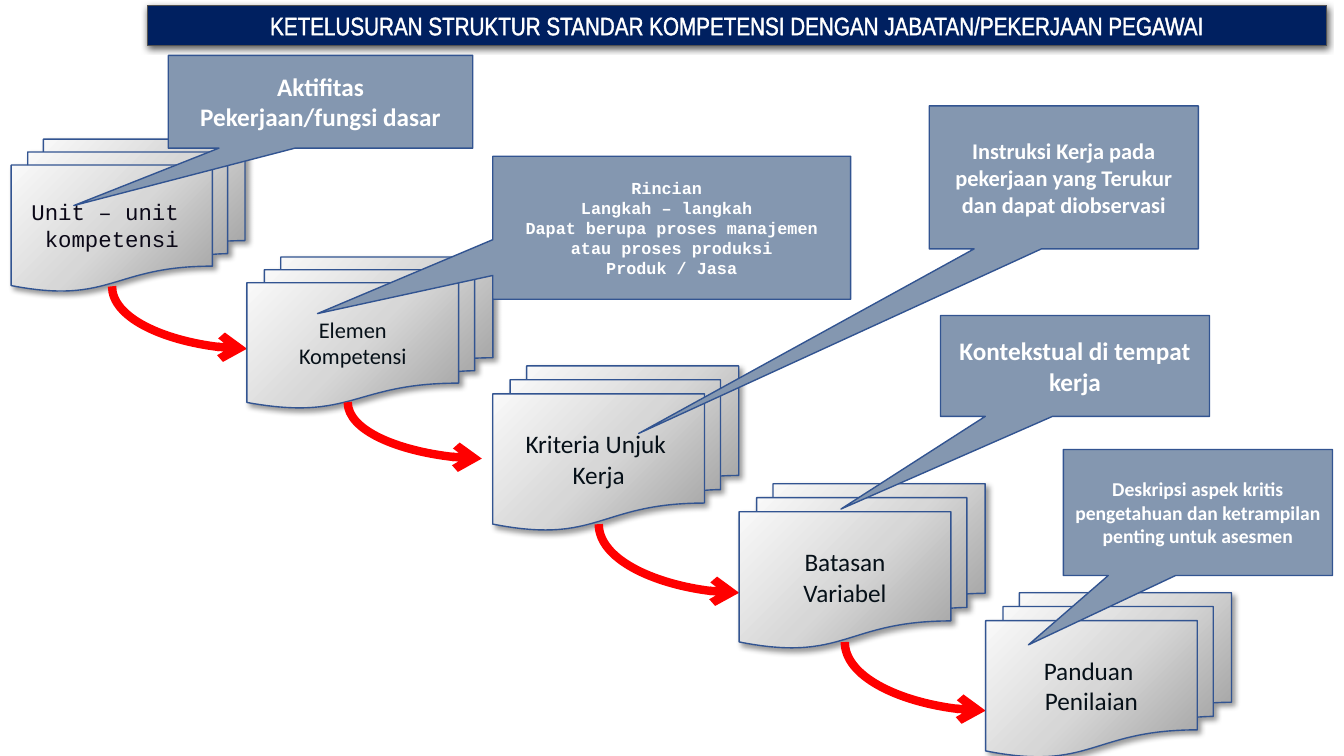
"""Build a slide tracing competency standards to the jobs of employees."""
from pptx import Presentation
from pptx.dml.color import RGBColor
from pptx.enum.shapes import MSO_CONNECTOR as Link, MSO_SHAPE as Kind
from pptx.enum.text import MSO_ANCHOR as Anchor, MSO_AUTO_SIZE as Fit, PP_ALIGN as Align
from pptx.oxml import parse_xml
from pptx.util import Pt

WHITE = RGBColor(0xFF, 0xFF, 0xFF)
NAVY = RGBColor(0x00, 0x20, 0x60)
GRAY = RGBColor(0x52, 0x52, 0x52)
BLUE = RGBColor(0x32, 0x54, 0x91)
SLATE = RGBColor(0x84, 0x97, 0xB0)
RED = RGBColor(0xFF, 0x00, 0x00)
INK = RGBColor(0x06, 0x10, 0x18)
DARK = RGBColor(0x0B, 0x08, 0x17)
NS = 'xmlns:a="http://schemas.openxmlformats.org/drawingml/2006/main"'
SHEEN = f'''<a:gradFill {NS} rotWithShape="1"><a:gsLst>
<a:gs pos="0"><a:srgbClr val="979797"/></a:gs>
<a:gs pos="50000"><a:srgbClr val="D7D7D7"/></a:gs>
<a:gs pos="100000"><a:srgbClr val="FFFFFF"/></a:gs></a:gsLst>
<a:path path="circle"><a:fillToRect l="100000" t="100000"/></a:path></a:gradFill>'''

deck = Presentation()
deck.slide_width, deck.slide_height = Pt(960), Pt(540)
slide = deck.slides.add_slide(deck.slide_layouts[6])
shapes = slide.shapes


def add_box(kind, box, lines, size, face, color, bold=False, edge=BLUE, weight=1):
    shape = shapes.add_shape(kind, *map(Pt, box))
    shape.shadow.inherit = False
    shape.line.color.rgb = edge
    shape.line.width = Pt(weight)
    frame = shape.text_frame
    frame.text = "\n".join(lines)
    frame.word_wrap = True
    frame.vertical_anchor = Anchor.MIDDLE
    for para in frame.paragraphs:
        para.alignment = Align.CENTER
        font = para.font
        font.name, font.size, font.bold = face, Pt(size), bold
        font.color.rgb = color
    return shape


def add_shade(shape, alpha, blur, dist, angle):
    glow = shape._element.spPr.find("{*}effectLst")
    glow.append(parse_xml(
        f'<a:outerShdw {NS} blurRad="{Pt(blur)}" dist="{Pt(dist)}" dir="{angle * 60000}" '
        f'algn="t" rotWithShape="0"><a:srgbClr val="000000">'
        f'<a:alpha val="{alpha * 1000}"/></a:srgbClr></a:outerShdw>'))


stages = [
    ((8, 99.4, 167, 108.7), ["Unit – unit ", "kompetensi"], 16, "Courier New", DARK,
     (80, 204.5, 176.4, 249.1)),
    ((176.4, 183.6, 175.7, 108), ["Elemen", "Kompetensi"], 16, "Calibri", INK,
     (248.4, 287.3, 344.2, 327.6)),
    ((352, 261.4, 175.7, 117.4), ["Kriteria Unjuk ", "Kerja"], 18, "Calibri", INK,
     (427.7, 374.4, 528, 423.4)),
    ((528, 345.6, 175.7, 117.4), ["Batasan", "Variabel"], 18, "Calibri", INK,
     (603.4, 458.6, 704, 507.6)),
    ((704, 423.4, 175.7, 117.4), ["Panduan ", "Penilaian"], 18, "Calibri", INK, None),
]
for box, lines, size, face, color, path in stages:
    stack = add_box(Kind.FLOWCHART_MULTIDOCUMENT, box, lines, size, face, color)
    stack._element.spPr.insert(2, parse_xml(SHEEN))
    add_shade(stack, 40, 4, 3, 45)
    if path:
        x1, y1, x2, y2 = path
        wide, high = y2 - y1, x2 - x1
        left, top = (x1 + x2 - wide) / 2, (y1 + y2 - high) / 2
        arrow = shapes.add_connector(
            Link.CURVE, Pt(left), Pt(top), Pt(left + wide), Pt(top + high))
        arrow.line.color.rgb = RED
        arrow.line.width = Pt(6)
        props = arrow._element.spPr
        props.find("{*}xfrm").set("rot", "16200000")
        props.find("{*}xfrm").set("flipH", "1")
        props.find("{*}prstGeom").set("prst", "curvedConnector2")
        props.find("{*}ln").append(parse_xml(f'<a:tailEnd {NS} type="arrow"/>'))
        props.append(parse_xml(f"<a:effectLst {NS}/>"))

notes = [
    ((120.2, 39.6, 217.5, 66.2), (-0.81, 1.12), 18, "Calibri",
     ["Aktifitas", "Pekerjaan/fungsi dasar"]),
    ((352, 111.6, 255.6, 102.2), (-0.99, 0.6), 12, "Courier New",
     ["Rincian ", "Langkah – langkah ",
      "Dapat berupa proses manajemen atau proses produksi", "Produk / Jasa"]),
    ((663.8, 75.6, 192.2, 102.2), (-1.58, 1.79), 16, "Calibri",
     ["Instruksi Kerja pada pekerjaan yang Terukur dan dapat diobservasi"]),
    ((671.8, 225.4, 192.2, 72), (-0.87, 1.42), 18, "Calibri",
     ["Kontekstual di tempat kerja"]),
    ((759.6, 321.1, 192.2, 90), (-0.63, 1.05), 14, "Calibri",
     ["Deskripsi aspek kritis pengetahuan dan ketrampilan penting untuk asesmen"]),
]
for box, tip, size, face, lines in notes:
    note = add_box(Kind.RECTANGULAR_CALLOUT, box, lines, size, face, WHITE, bold=True)
    note.fill.solid()
    note.fill.fore_color.rgb = SLATE
    note.adjustments[0], note.adjustments[1] = tip

title = add_box(
    Kind.RECTANGLE, (105.4, 3.6, 842.4, 29),
    ["KETELUSURAN STRUKTUR STANDAR KOMPETENSI DENGAN JABATAN/PEKERJAAN PEGAWAI"],
    18, "Arial Narrow", WHITE, edge=GRAY, weight=0.75)
title.fill.solid()
title.fill.fore_color.rgb = NAVY
add_shade(title, 63, 4.5, 1.5, 90)
title.text_frame.vertical_anchor = Anchor.TOP
title.text_frame.auto_size = Fit.SHAPE_TO_FIT_TEXT
run = title.text_frame.paragraphs[0].runs[0]
run._r.get_or_add_rPr().insert(0, parse_xml(
    f'<a:ln {NS} w="{Pt(1.45)}"><a:solidFill><a:srgbClr val="{WHITE}"/></a:solidFill></a:ln>'))

deck.save("out.pptx")
